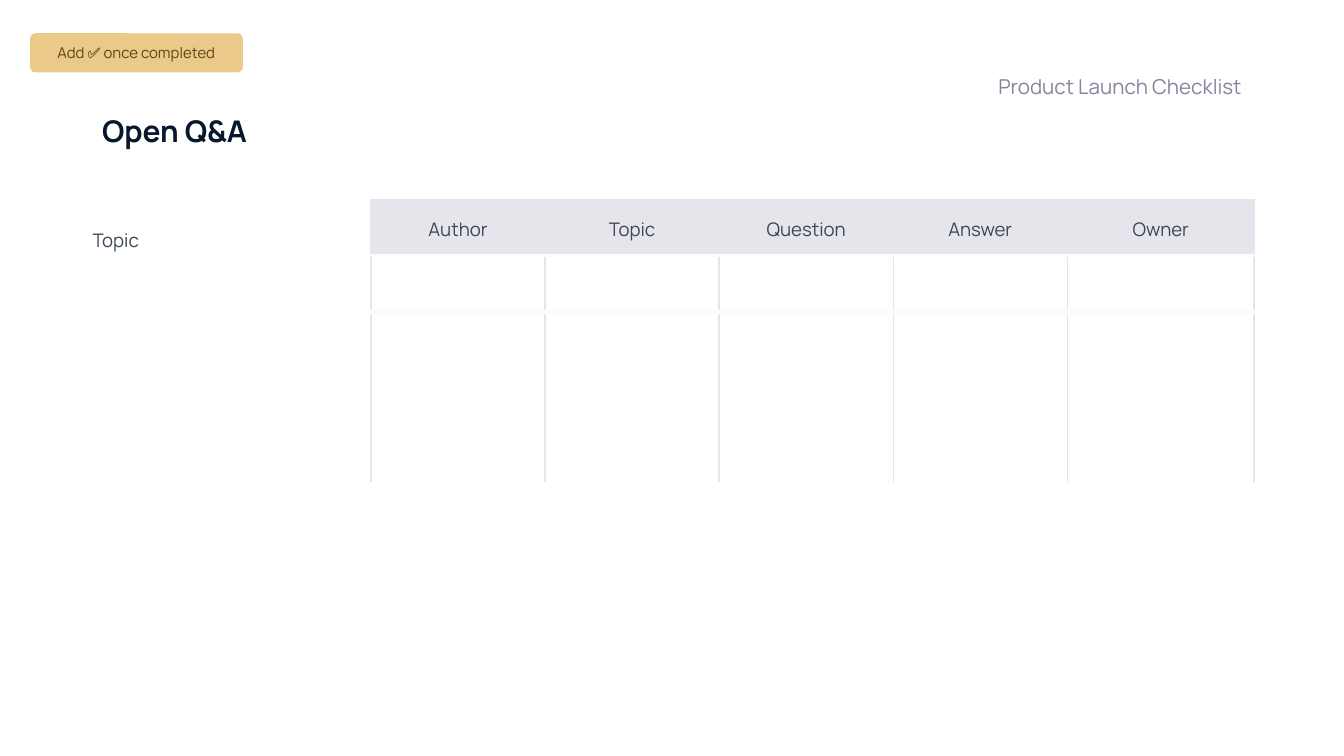
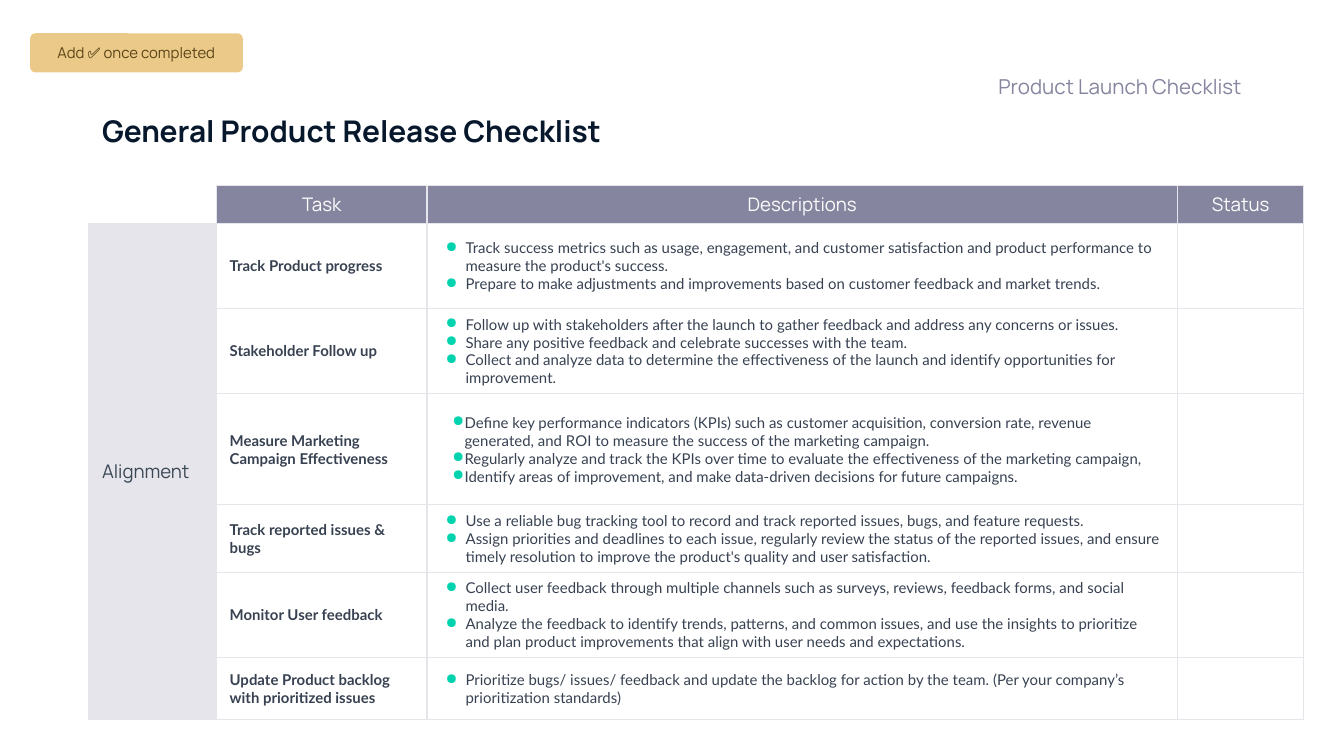
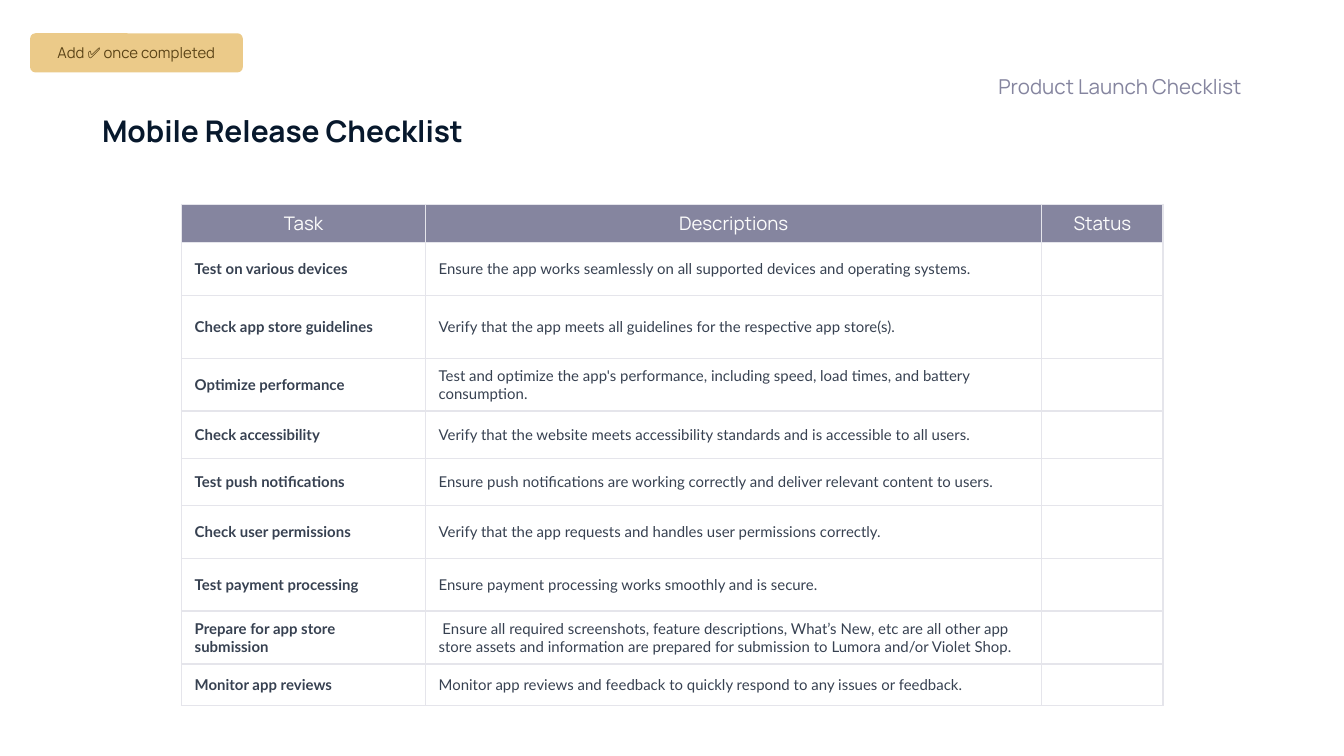
import pptx
import pptx.dml.color
import pptx.enum.shapes
import pptx.enum.text
import pptx.oxml.ns
import pptx.util
from lxml import etree

Cm = pptx.util.Cm
Pt = pptx.util.Pt
ALIGN = pptx.enum.text.PP_ALIGN
ANCHOR = pptx.enum.text.MSO_ANCHOR
qn = pptx.oxml.ns.qn

COLOURS = {
    "background": "FFFFFF",
    "title": "07182C",
    "accent": "85859F",
    "light": "FCFCFC",
    "grid": "E5E5EB",
    "label": "3C4856",
    "body": "374151",
    "bullet": "00D3AD",
    "badge": "EBCA89",
    "badge_text": "5A4316",
}

# Text styles: font values and colour
STYLES = {
    "title": ({"name": "Manrope", "size": Pt(16), "bold": True}, "title"),
    "deck": ({"name": "Manrope", "size": Pt(11), "bold": False}, "accent"),
    "badge": ({"name": "Manrope", "size": Pt(8), "bold": False}, "badge_text"),
    "header": ({"name": "Manrope", "size": Pt(10), "bold": False}, "light"),
    "label": ({"name": "Manrope", "size": Pt(10), "bold": False}, "label"),
    "task": ({"name": "Lato", "size": Pt(8), "bold": True}, "body"),
    "description": ({"name": "Lato", "size": Pt(8), "bold": False}, "body"),
}

FRAME_MARGINS = {"margin_left": Cm(0.25), "margin_top": Cm(0.25),
                 "margin_right": Cm(0.25), "margin_bottom": Cm(0.25)}
CELL_FORMAT = {"margin_left": Cm(0.25), "margin_top": Cm(0.13),
               "margin_right": Cm(0.25), "margin_bottom": Cm(0.13),
               "vertical_anchor": ANCHOR.MIDDLE}
QUESTION_FORMAT = {"margin_left": Cm(0.07), "margin_top": Cm(0.04),
                   "margin_right": Cm(0.07), "margin_bottom": Cm(0.04),
                   "vertical_anchor": ANCHOR.MIDDLE}

GRID_LINE = ("grid", 0.75)
ALL_BORDERS = {side: GRID_LINE for side in "LRTB"}
NO_STYLE = "{2D5ABB26-0587-4C30-8999-92F81FD0307C}"

# Slide content
QUESTION_HEADINGS = ["Author", "Topic", "Question", "Answer", "Owner"]
CHECKLIST_HEADINGS = ["Task", "Descriptions", "Status"]

GENERAL_TASKS = [
    ("Track Product progress", [
        "Track success metrics such as usage, engagement, and customer satisfaction and "
        "product performance to measure the product's success.",
        "Prepare to make adjustments and improvements based on customer feedback and "
        "market trends."]),
    ("Stakeholder Follow up", [
        "Follow up with stakeholders after the launch to gather feedback and address any "
        "concerns or issues.",
        "Share any positive feedback and celebrate successes with the team.",
        "Collect and analyze data to determine the effectiveness of the launch and identify "
        "opportunities for improvement."]),
    ("Measure Marketing Campaign Effectiveness", [
        "Define key performance indicators (KPIs) such as customer acquisition, conversion "
        "rate, revenue generated, and ROI to measure the success of the marketing campaign.",
        "Regularly analyze and track the KPIs over time to evaluate the effectiveness of the "
        "marketing campaign,",
        "Identify areas of improvement, and make data-driven decisions for future campaigns."]),
    ("Track reported issues & bugs", [
        "Use a reliable bug tracking tool to record and track reported issues, bugs, and "
        "feature requests.",
        "Assign priorities and deadlines to each issue, regularly review the status of the "
        "reported issues, and ensure timely resolution to improve the product's quality and "
        "user satisfaction."]),
    ("Monitor User feedback", [
        "Collect user feedback through multiple channels such as surveys, reviews, feedback "
        "forms, and social media.",
        "Analyze the feedback to identify trends, patterns, and common issues, and use the "
        "insights to prioritize and plan product improvements that align with user needs and "
        "expectations."]),
    ("Update Product backlog with prioritized issues", [
        "Prioritize bugs/ issues/ feedback and update the backlog for action by the team. "
        "(Per your company’s prioritization standards)"]),
]

MOBILE_TASKS = [
    ("Test on various devices",
     ["Ensure the app works seamlessly on all supported devices and operating systems."]),
    ("Check app store guidelines",
     ["Verify that the app meets all guidelines for the respective app store(s)."]),
    ("Optimize performance",
     ["Test and optimize the app's performance, including speed, load times, and battery "
      "consumption."]),
    ("Check accessibility",
     ["Verify that the website meets accessibility standards and is accessible to all users."]),
    ("Test push notifications",
     ["Ensure push notifications are working correctly and deliver relevant content to users."]),
    ("Check user permissions",
     ["Verify that the app requests and handles user permissions correctly."]),
    ("Test payment processing",
     ["Ensure payment processing works smoothly and is secure."]),
    ("Prepare for app store submission",
     [" Ensure all required screenshots, feature descriptions, What’s New, etc are all other "
      "app store assets and information are prepared for submission to Lumora and/or "
      "Violet Shop."]),
    ("Monitor app reviews",
     ["Monitor app reviews and feedback to quickly respond to any issues or feedback."]),
]


def rgb(colour):
    return pptx.dml.color.RGBColor.from_string(COLOURS[colour])


def apply_format(target, values):
    for name, value in values.items():
        setattr(target, name, value)


def write_text(text_frame, lines, style, **paragraph_format):
    """Write one paragraph per line in a named style."""
    font_format, colour = STYLES[style]
    for index, line in enumerate(lines):
        paragraph = text_frame.add_paragraph() if index else text_frame.paragraphs[0]
        apply_format(paragraph, paragraph_format)
        run = paragraph.add_run()
        run.text = line
        apply_format(run.font, font_format)
        run.font.color.rgb = rgb(colour)


def add_bullets(text_frame, left, hanging):
    for paragraph in text_frame.paragraphs:
        properties = paragraph._p.get_or_add_pPr()
        properties.set("marL", str(Cm(left)))
        properties.set("indent", str(-Cm(hanging)))
        colour = etree.SubElement(properties, qn("a:buClr"))
        etree.SubElement(colour, qn("a:srgbClr"), val=COLOURS["bullet"])
        etree.SubElement(properties, qn("a:buChar"), char="●")


def add_text_box(slide, box, text, style, frame_format, **paragraph_format):
    shape = slide.shapes.add_textbox(*map(Cm, box))
    apply_format(shape.text_frame, {"word_wrap": True, **FRAME_MARGINS, **frame_format})
    write_text(shape.text_frame, [text], style, **paragraph_format)


def add_badge(slide):
    shape = slide.shapes.add_shape(pptx.enum.shapes.MSO_SHAPE.ROUNDED_RECTANGLE,
                                   Cm(0.57), Cm(0.63), Cm(4.02), Cm(0.74))
    shape.adjustments[0] = 0.136
    shape.shadow.inherit = False
    shape.fill.solid()
    shape.fill.fore_color.rgb = rgb("badge")
    shape.line.fill.background()
    apply_format(shape.text_frame, {"word_wrap": True, **FRAME_MARGINS,
                                    "vertical_anchor": ANCHOR.MIDDLE})
    write_text(shape.text_frame, ["Add ✅ once completed"], "badge", alignment=ALIGN.CENTER)


def add_checklist_slide(presentation, title, title_width=10.67):
    """Add a blank slide with the title, deck name and badge."""
    slide = presentation.slides.add_slide(presentation.slide_layouts[6])
    slide.background.fill.solid()
    slide.background.fill.fore_color.rgb = rgb("background")
    add_text_box(slide, (1.68, 1.88, title_width, 1.19), title, "title", {})
    add_text_box(slide, (12.7, 1.17, 11.02, 0.84), "Product Launch Checklist", "deck",
                 {"vertical_anchor": ANCHOR.BOTTOM, "margin_bottom": Cm(0.15)},
                 alignment=ALIGN.RIGHT)
    add_badge(slide)
    return slide


def add_plain_table(slide, left, top, widths, heights):
    """Add an unstyled table; small end marks keep empty rows low."""
    frame = slide.shapes.add_table(len(heights), len(widths), Cm(left), Cm(top),
                                   Cm(sum(widths)), Cm(sum(heights)))
    table = frame.table
    apply_format(table, {"first_row": False, "horz_banding": False})
    table._tbl.tblPr.find(qn("a:tableStyleId")).text = NO_STYLE
    for column, width in zip(table.columns, widths):
        column.width = Cm(width)
    for row, height in zip(table.rows, heights):
        row.height = Cm(height)
    for cell in table.iter_cells():
        etree.SubElement(cell.text_frame.paragraphs[0]._p, qn("a:endParaRPr"), sz="800")
    return table


def format_cell(cell, cell_format, borders, fill=None):
    apply_format(cell, cell_format)
    properties = cell._tc.get_or_add_tcPr()
    for side in "LRTB":
        if side not in borders:
            continue
        colour, width = borders[side]
        line = etree.SubElement(properties, qn(f"a:ln{side}"), w=str(Pt(width)))
        solid = etree.SubElement(line, qn("a:solidFill"))
        etree.SubElement(solid, qn("a:srgbClr"), val=COLOURS[colour])
    if fill:
        cell.fill.solid()
        cell.fill.fore_color.rgb = rgb(fill)
    else:
        cell.fill.background()


def add_question_table(slide):
    table = add_plain_table(slide, 1.68, 3.76, [5.33] + [3.29] * 4 + [3.53], [1.07] * 5)
    divider = ("light", 2.25)
    for row in range(5):
        format_cell(table.cell(row, 0), QUESTION_FORMAT, {"R": GRID_LINE})
        for column in range(1, 6):
            borders = {"L": GRID_LINE, "R": GRID_LINE}
            if row < 2:
                borders["T" if row else "B"] = divider
            format_cell(table.cell(row, column), QUESTION_FORMAT, borders,
                        None if row else "grid")
    topic = table.cell(0, 0)
    topic.vertical_anchor = ANCHOR.BOTTOM
    write_text(topic.text_frame, ["Topic"], "label", line_spacing=1.15)
    for column, heading in enumerate(QUESTION_HEADINGS, 1):
        write_text(table.cell(0, column).text_frame, [heading], "label",
                   alignment=ALIGN.CENTER, line_spacing=1.15)


def add_task_table(slide, left, top, widths, heights, tasks):
    """Fill the last three columns; any column before them stays free."""
    table = add_plain_table(slide, left, top, widths, heights)
    first = len(widths) - len(CHECKLIST_HEADINGS)
    for column, heading in enumerate(CHECKLIST_HEADINGS, first):
        for row in range(len(heights)):
            format_cell(table.cell(row, column), CELL_FORMAT, ALL_BORDERS,
                        None if row else "accent")
        write_text(table.cell(0, column).text_frame, [heading], "header",
                   alignment=ALIGN.CENTER)
    for row, (task, descriptions) in enumerate(tasks, 1):
        write_text(table.cell(row, first).text_frame, [task], "task")
        write_text(table.cell(row, first + 1).text_frame, descriptions, "description")
    return table


def add_general_table(slide):
    table = add_task_table(slide, 1.68, 3.5, [2.41, 3.98, 14.18, 2.39],
                           [0.72, 1.61, 1.61, 2.1, 1.27, 1.61, 1.17], GENERAL_TASKS)
    # Group column
    format_cell(table.cell(0, 0), CELL_FORMAT, {"R": GRID_LINE, "B": GRID_LINE})
    for row in range(1, 7):
        format_cell(table.cell(row, 0), CELL_FORMAT, ALL_BORDERS, "grid")
    table.cell(1, 0).merge(table.cell(6, 0))
    write_text(table.cell(1, 0).text_frame, ["Alignment"], "label")
    # Bullets, with a tighter indent for the marketing task
    for row in range(1, 7):
        cell = table.cell(row, 2)
        marketing = row == 3
        if marketing:
            cell.margin_left = Cm(0.48)
        add_bullets(cell.text_frame, 0.23 if marketing else 0.48, 0.38)


def main():
    presentation = pptx.Presentation()
    apply_format(presentation, {"slide_width": Cm(25.4), "slide_height": Cm(14.29)})

    add_question_table(add_checklist_slide(presentation, "Open Q&A", 16.48))
    add_general_table(add_checklist_slide(presentation, "General Product Release Checklist"))
    add_task_table(add_checklist_slide(presentation, "Mobile Release Checklist"),
                   3.43, 3.86, [4.61, 11.65, 2.29],
                   [0.72, 1, 1.19, 1, 0.89, 0.89, 1, 1, 1, 0.78], MOBILE_TASKS)

    presentation.save("out.pptx")


if __name__ == "__main__":
    main()
